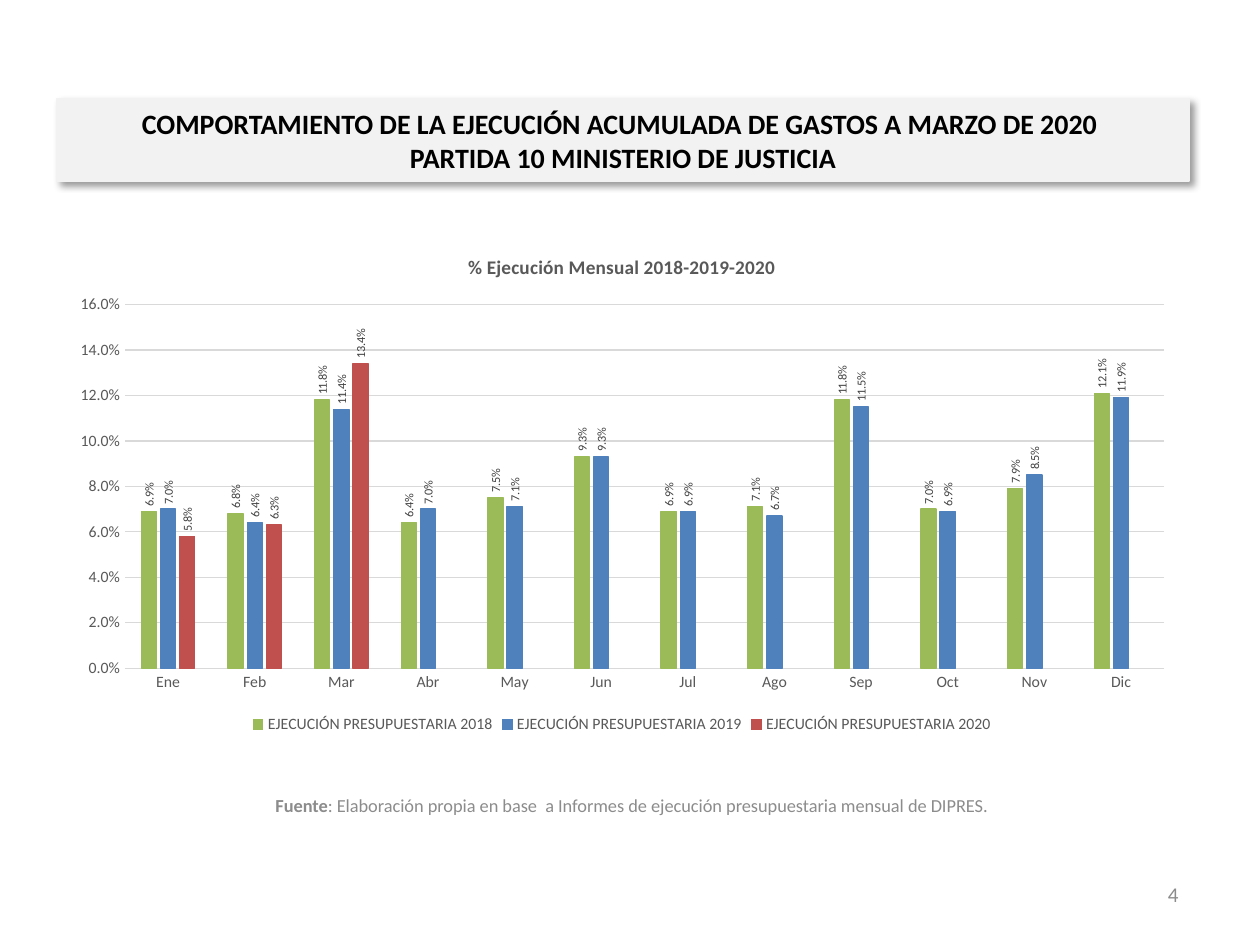
"""Build the slide on monthly budget execution of the justice ministry."""
from lxml.etree import SubElement
from pptx import Presentation
from pptx.chart.data import CategoryChartData
from pptx.dml.color import RGBColor
from pptx.enum.chart import XL_CHART_TYPE as ChartType
from pptx.enum.chart import XL_LABEL_POSITION as LabelPosition
from pptx.enum.chart import XL_LEGEND_POSITION as LegendPosition
from pptx.enum.chart import XL_TICK_MARK as TickMark
from pptx.enum.shapes import MSO_SHAPE as Shape
from pptx.enum.text import MSO_ANCHOR as Anchor
from pptx.enum.text import PP_ALIGN as Align
from pptx.oxml import parse_xml
from pptx.oxml.ns import nsdecls, qn
from pptx.util import Emu, Pt

EMU_PER_PX = 914400 / 126
FONT = "Calibri"
PERCENT = "0.0%"
BLACK, GRAY, AXIS_GRAY, LABEL_GRAY = "000000", "8C8C8C", "595959", "404040"
GRID_GRAY, BANNER_GRAY = "D9D9D9", "F2F2F2"

MONTHS = ["Ene", "Feb", "Mar", "Abr", "May", "Jun",
          "Jul", "Ago", "Sep", "Oct", "Nov", "Dic"]
EXECUTION = [
    (2018, "9BBB59", [0.069, 0.068, 0.118, 0.064, 0.075, 0.093,
                      0.069, 0.071, 0.118, 0.07, 0.079, 0.121]),
    (2019, "4F81BD", [0.07, 0.064, 0.114, 0.07, 0.071, 0.093,
                      0.069, 0.067, 0.115, 0.069, 0.085, 0.119]),
    (2020, "C0504D", [0.058, 0.063, 0.134] + [None] * 9),
]


def px(*lengths):
    """Turn pixel lengths into EMU."""
    return [Emu(round(length * EMU_PER_PX)) for length in lengths]


def color(hex_code):
    """Turn a hex string into a colour."""
    return RGBColor.from_string(hex_code)


def style_font(font, size, hex_code, bold=False):
    """Set face, size, colour and weight of a font."""
    font.name, font.size, font.bold = FONT, Pt(size), bold
    font.color.rgb = color(hex_code)


def style_line(line, hex_code):
    """Draw a thin solid line."""
    line.color.rgb = color(hex_code)
    line.width = Pt(0.75)


def add_run(paragraph, text, size, hex_code, bold=False):
    """Append one styled run."""
    run = paragraph.add_run()
    run.text = text
    style_font(run.font, size, hex_code, bold)


def middle_paragraph(shape, alignment):
    """Prepare a vertically centred frame and return its first paragraph."""
    frame = shape.text_frame
    frame.word_wrap = True
    frame.vertical_anchor = Anchor.MIDDLE
    paragraph = frame.paragraphs[0]
    paragraph.alignment = alignment
    return paragraph


def add_note(slide, box, alignment, size, *pieces):
    """Add a gray text box from (text, bold) pieces."""
    paragraph = middle_paragraph(slide.shapes.add_textbox(*px(*box)), alignment)
    for text, bold in pieces:
        add_run(paragraph, text, size, GRAY, bold)


def add_shadow(shape):
    """Cast a soft shadow to the lower right."""
    shape.shadow.inherit = False
    effects = shape.element.spPr.find(qn("a:effectLst"))
    shadow = SubElement(effects, qn("a:outerShdw"), blurRad=str(Pt(4)),
                        dist=str(Pt(3)), dir="2700000", algn="tl", rotWithShape="0")
    tint = SubElement(shadow, qn("a:srgbClr"), val=BLACK)
    SubElement(tint, qn("a:alpha"), val="40000")


def add_banner(slide, box, lines):
    """Add the shaded heading, one line break between lines."""
    banner = slide.shapes.add_shape(Shape.RECTANGLE, *px(*box))
    banner.fill.solid()
    banner.fill.fore_color.rgb = color(BANNER_GRAY)
    style_line(banner.line, BANNER_GRAY)
    add_shadow(banner)
    paragraph = middle_paragraph(banner, Align.CENTER)
    for number, line in enumerate(lines):
        if number:
            paragraph.add_line_break()
        add_run(paragraph, line, 16, BLACK, True)


def style_series(series, hex_code):
    """Colour the bars and add upright value labels."""
    series.format.fill.solid()
    series.format.fill.fore_color.rgb = color(hex_code)
    style_line(series.format.line, hex_code)
    series.invert_if_negative = False
    labels = series.data_labels
    style_font(labels.font, 7, LABEL_GRAY)
    labels.show_value = True
    labels.number_format, labels.number_format_is_linked = PERCENT, False
    labels.position = LabelPosition.OUTSIDE_END
    for body in labels._element.iter(qn("a:bodyPr")):
        body.set("rot", "-5400000")
        body.set("vert", "horz")


def style_axes(chart):
    """Set tick labels, grid and scale of both axes."""
    months, percents = chart.category_axis, chart.value_axis
    for axis in (months, percents):
        axis.major_tick_mark = axis.minor_tick_mark = TickMark.NONE
        style_font(axis.tick_labels.font, 9, AXIS_GRAY)
    style_line(months.format.line, GRID_GRAY)
    percents.format.line.fill.background()
    style_line(percents.major_gridlines.format.line, GRID_GRAY)
    percents.minimum_scale, percents.maximum_scale = 0, 0.16
    percents.major_unit = 0.02
    labels = percents.tick_labels
    labels.number_format, labels.number_format_is_linked = PERCENT, False


def place_plot(chart, **fractions):
    """Fix the inner plot area as fractions of the chart."""
    area = chart._chartSpace.find(".//" + qn("c:plotArea"))
    for old in area.findall(qn("c:layout")):
        area.remove(old)
    sizes = "".join(f'<c:{k} val="{v}"/>' for k, v in fractions.items())
    area.insert(0, parse_xml(
        f'<c:layout {nsdecls("c")}><c:manualLayout><c:layoutTarget val="inner"/>'
        f'<c:xMode val="edge"/><c:yMode val="edge"/>{sizes}'
        f'</c:manualLayout></c:layout>'))


def add_execution_chart(slide, box):
    """Add the clustered columns of the three years."""
    data = CategoryChartData(number_format=PERCENT)
    data.categories = MONTHS
    for year, _, shares in EXECUTION:
        data.add_series(f"EJECUCIÓN PRESUPUESTARIA {year}", shares)
    chart = slide.shapes.add_chart(
        ChartType.COLUMN_CLUSTERED, *px(*box), data).chart
    style_font(chart.font, 10, BLACK)
    chart.has_title = True
    add_run(chart.chart_title.text_frame.paragraphs[0],
            "% Ejecución Mensual 2018-2019-2020", 11, AXIS_GRAY, True)
    chart.chart_title.include_in_layout = False
    chart.has_legend = True
    chart.legend.position = LegendPosition.BOTTOM
    chart.legend.include_in_layout = False
    style_font(chart.legend.font, 9, AXIS_GRAY)
    plot = chart.plots[0]
    plot.gap_width, plot.overlap, plot.vary_by_categories = 219, -27, False
    for series, (_, hex_code, _) in zip(plot.series, EXECUTION):
        style_series(series, hex_code)
    style_axes(chart)
    place_plot(chart, x=0.06, y=0.14, w=0.92, h=0.72)


def main():
    """Build and save the slide."""
    deck = Presentation()
    deck.slide_width, deck.slide_height = px(1260, 945)
    slide = deck.slides.add_slide(deck.slide_layouts[6])
    add_note(slide, (897, 869, 294, 50), Align.RIGHT, 12, ("4", False))
    add_banner(slide, (57, 99, 1132, 82), [
        "COMPORTAMIENTO DE LA EJECUCIÓN ACUMULADA DE GASTOS A MARZO DE 2020 ",
        "PARTIDA 10 MINISTERIO DE JUSTICIA"])
    add_note(slide, (53, 780, 1158, 50), Align.CENTER, 10.5, ("Fuente", True),
             (": Elaboración propia en base  a Informes de ejecución "
              "presupuestaria mensual de DIPRES.", False))
    add_execution_chart(slide, (57, 234, 1130, 505))
    deck.save("out.pptx")


if __name__ == "__main__":
    main()
